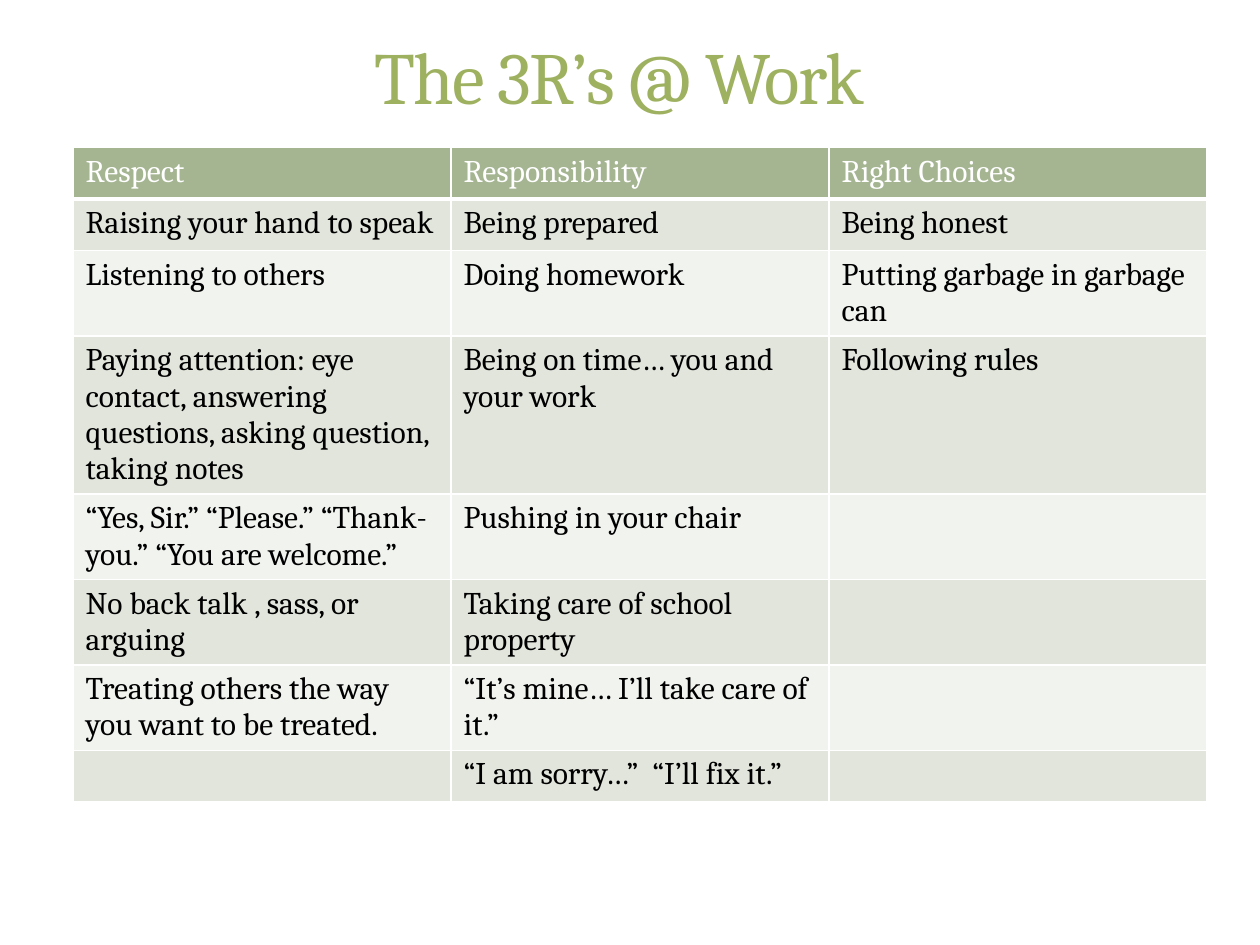
from lxml.etree import SubElement
from pptx import Presentation
from pptx.dml.color import RGBColor
from pptx.enum.text import MSO_ANCHOR, PP_ALIGN
from pptx.oxml.ns import qn
from pptx.util import Inches, Pt

# Content
TITLE = "The 3R’s @ Work"
ROWS = [
    ("Respect", "Responsibility", "Right Choices"),
    ("Raising your hand to speak", "Being prepared", "Being honest"),
    ("Listening to others", "Doing homework", "Putting garbage in garbage can"),
    ("Paying attention: eye contact, answering questions, asking question, taking notes",
     "Being on time… you and your work", "Following rules"),
    ("“Yes, Sir.” “Please.” “Thank-you.” “You are welcome.”", "Pushing in your chair", ""),
    ("No back talk , sass, or arguing", "Taking care of school property", ""),
    ("Treating others the way you want to be treated.",
     "“It’s mine… I’ll take care of it.”", ""),
    ("", "“I am sorry…”  “I’ll fix it.”", ""),
]

# Format
FONT = "Cambria"
WHITE = RGBColor(0xFF, 0xFF, 0xFF)
BLACK = RGBColor(0x00, 0x00, 0x00)
TITLE_GREEN = RGBColor(0x9E, 0xB1, 0x60)
HEADER = RGBColor(0xA5, 0xB5, 0x92)
BANDS = (RGBColor(0xF0, 0xF3, 0xEE), RGBColor(0xE1, 0xE5, 0xDC))
COL_W, ROW_H = 3, 0.41


def write(tf, text, size=18, color=BLACK, align=PP_ALIGN.LEFT, spacing=None):
    p = tf.paragraphs[0]
    p.alignment = align
    if not text:
        return
    r = p.add_run()
    r.text = text
    r.font.name, r.font.size = FONT, Pt(size)
    r.font.color.rgb = color
    if spacing is not None:
        r.font._element.set("spc", str(int(spacing * 100)))


def add_borders(cell, widths, color=WHITE):
    tcPr = cell._tc.get_or_add_tcPr()
    for side, width in zip("LRTB", widths):
        ln = SubElement(tcPr, qn(f"a:ln{side}"), w=str(Pt(width)))
        fill = SubElement(ln, qn("a:solidFill"))
        SubElement(fill, qn("a:srgbClr"), val=str(color))


prs = Presentation()
prs.slide_width, prs.slide_height = Inches(10), Inches(7.5)
s = prs.slides.add_slide(prs.slide_layouts[5])

# Title
title = s.shapes.title
title.left, title.top = Inches(2.33), Inches(0.17)
title.width, title.height = Inches(5.17), Inches(0.83)
title.text_frame.vertical_anchor = MSO_ANCHOR.BOTTOM
write(title.text_frame, TITLE, size=42, color=TITLE_GREEN,
      align=PP_ALIGN.CENTER, spacing=-1)

# Table with a header row and alternating bands
n_rows, n_cols = len(ROWS), len(ROWS[0])
table = s.shapes.add_table(n_rows, n_cols, Inches(0.58), Inches(1.17),
                           Inches(COL_W * n_cols), Inches(ROW_H * n_rows)).table
for i, row in enumerate(ROWS):
    top = 3 if i == 1 else 1
    bottom = 3 if i == 0 else 1
    for j, text in enumerate(row):
        cell = table.cell(i, j)
        add_borders(cell, (1, 1, top, bottom))
        cell.fill.solid()
        cell.fill.fore_color.rgb = BANDS[i % 2] if i else HEADER
        write(cell.text_frame, text, color=BLACK if i else WHITE)
        if i == 0:
            cell.text_frame.paragraphs[0].runs[0].font.bold = False

prs.save("out.pptx")
